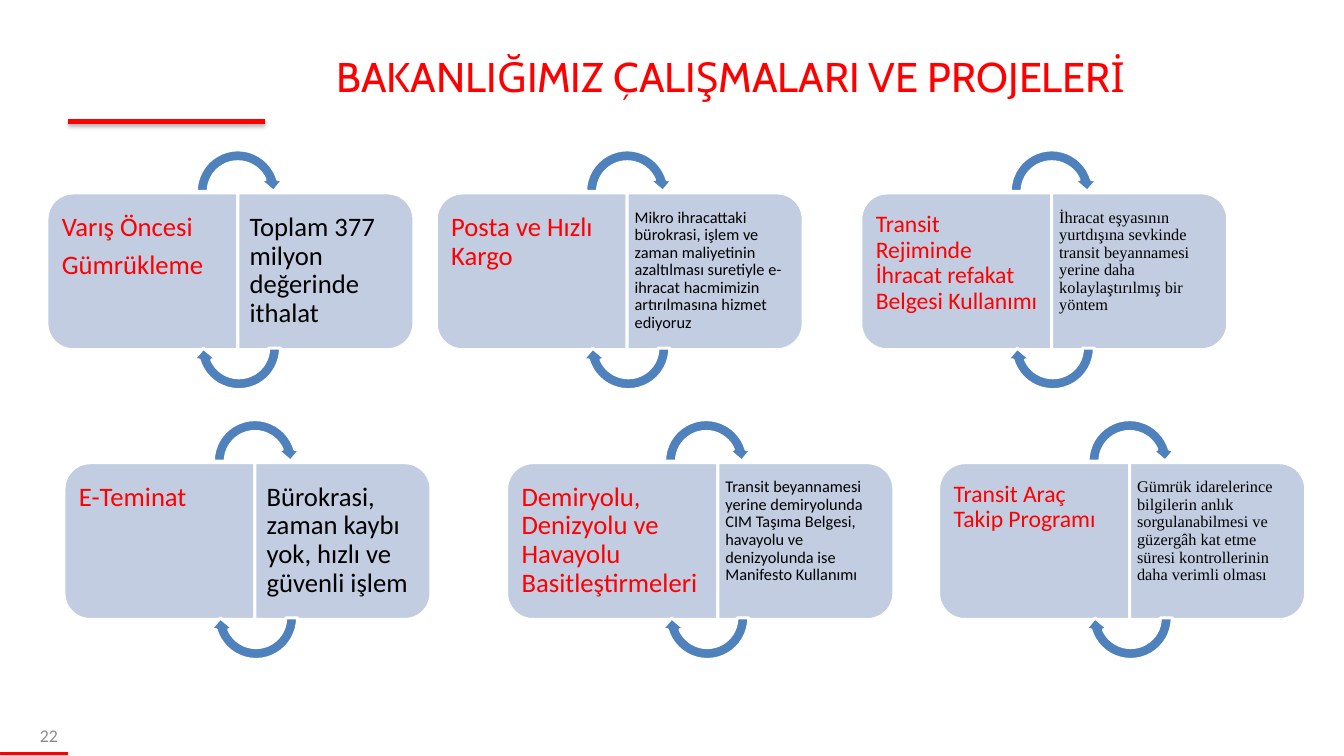
from dataclasses import dataclass

from lxml.etree import SubElement
from pptx import Presentation
from pptx.dml.color import RGBColor
from pptx.enum.shapes import MSO_CONNECTOR, MSO_SHAPE
from pptx.enum.text import MSO_ANCHOR, PP_ALIGN
from pptx.oxml.ns import qn
from pptx.shapes.autoshape import Shape
from pptx.slide import Slide
from pptx.util import Inches, Pt


@dataclass(frozen=True)
class TextStyle:
    size: int
    color: str
    font: str = "Calibri"
    insets: tuple[float, float, float, float] = (0.1, 0.05, 0.1, 0.05)
    align: PP_ALIGN = PP_ALIGN.LEFT
    anchor: MSO_ANCHOR = MSO_ANCHOR.TOP
    line_spacing: float = 0.9
    space_ratio: float = 0.35


@dataclass(frozen=True)
class Theme:
    accent: str = "FF0000"
    panel: str = "C2CDE1"
    arrow: str = "4F81BD"
    outline: str = "FFFFFF"
    outline_width: float = 2
    title: TextStyle = TextStyle(28, "FF0000", "Cabin", align=PP_ALIGN.CENTER,
                                 anchor=MSO_ANCHOR.MIDDLE, line_spacing=1, space_ratio=0)
    page_number: TextStyle = TextStyle(12, "8C8C8C", align=PP_ALIGN.RIGHT,
                                       anchor=MSO_ANCHOR.MIDDLE, line_spacing=1, space_ratio=0)
    topic: TextStyle = TextStyle(18, "FF0000", insets=(0.07, 0.12, 0.11, 0.12))
    small_topic: TextStyle = TextStyle(16, "FF0000", insets=(0.07, 0.11, 0.1, 0.11))
    result: TextStyle = TextStyle(18, "000000", insets=(0.11, 0.12, 0.07, 0.12))
    detail: TextStyle = TextStyle(11, "000000", insets=(0.07, 0.08, 0.05, 0.08))
    serif_detail: TextStyle = TextStyle(11, "000000", "Times New Roman",
                                        insets=(0.07, 0.08, 0.05, 0.08))


@dataclass(frozen=True)
class Project:
    left: float
    top: float
    topic: list[str]
    topic_style: TextStyle
    outcome: str
    outcome_style: TextStyle
    topic_width: float = 1.79
    arrow_shift: float = 0


@dataclass(frozen=True)
class Rule:
    left: float
    right: float
    y: float
    width: float
    shadow_alpha: int
    shadow_distance: float


THEME = Theme()
FIRST_ROW, SECOND_ROW = 1.81, 4.34
PANEL_HEIGHT = 1.47
OUTCOME_WIDTH = 1.65
TEXT_HEIGHT = 1.33
TEXT_MARGIN = 0.07
ARROW_SIZE = 0.89
ARROW_ADJUSTMENTS = (0.125, 11.423, 204.577, 108, 0.125)

RULES = [
    Rule(0.64, 2.48, 1.14, 3, 35, 1.8),
    Rule(0, 0.64, 7.07, 2, 38, 1.6),
]

PROJECTS = [
    Project(0.44, FIRST_ROW, ["Varış Öncesi", "Gümrükleme"], THEME.topic,
            "Toplam 377 milyon değerinde ithalat", THEME.result),
    Project(0.6, SECOND_ROW, ["E-Teminat"], THEME.topic,
            "Bürokrasi, zaman kaybı yok, hızlı ve güvenli işlem", THEME.result),
    Project(4.09, FIRST_ROW, ["Posta ve Hızlı Kargo"], THEME.topic,
            "Mikro ihracattaki bürokrasi, işlem ve zaman maliyetinin azaltılması suretiyle "
            "e-ihracat hacmimizin artırılmasına hizmet ediyoruz", THEME.detail),
    Project(4.75, SECOND_ROW, ["Demiryolu, Denizyolu ve Havayolu Basitleştirmeleri"], THEME.topic,
            "Transit beyannamesi yerine demiryolunda CIM Taşıma Belgesi, havayolu ve "
            "denizyolunda ise Manifesto Kullanımı", THEME.detail,
            topic_width=1.98, arrow_shift=-0.11),
    Project(8.07, FIRST_ROW, ["Transit Rejiminde İhracat refakat Belgesi Kullanımı"],
            THEME.small_topic,
            "İhracat eşyasının yurtdışına sevkinde transit beyannamesi yerine daha "
            "kolaylaştırılmış bir yöntem", THEME.serif_detail),
    Project(8.8, SECOND_ROW, ["Transit Araç Takip Programı"], THEME.small_topic,
            "Gümrük idarelerince bilgilerin anlık sorgulanabilmesi ve güzergâh kat etme "
            "süresi kontrollerinin daha verimli olması", THEME.serif_detail),
]


def add_text(slide: Slide, left: float, top: float, width: float, height: float,
             lines: list[str], style: TextStyle) -> None:
    frame = slide.shapes.add_textbox(
        Inches(left), Inches(top), Inches(width), Inches(height)).text_frame
    frame.word_wrap = True
    frame.vertical_anchor = style.anchor
    (frame.margin_left, frame.margin_top,
     frame.margin_right, frame.margin_bottom) = map(Inches, style.insets)
    frame.text = "\n".join(lines)
    for paragraph in frame.paragraphs:
        paragraph.alignment = style.align
        paragraph.line_spacing = style.line_spacing
        paragraph.space_after = Pt(style.space_ratio * style.size)
        paragraph.font.size = Pt(style.size)
        paragraph.font.name = style.font
        paragraph.font.color.rgb = RGBColor.from_string(style.color)


def paint(shape: Shape, fill: str) -> None:
    shape.shadow.inherit = False
    shape.fill.solid()
    shape.fill.fore_color.rgb = RGBColor.from_string(fill)
    shape.line.color.rgb = RGBColor.from_string(THEME.outline)
    shape.line.width = Pt(THEME.outline_width)


def add_panel(slide: Slide, left: float, top: float, width: float, rotation: int) -> None:
    offset = (width - PANEL_HEIGHT) / 2
    panel = slide.shapes.add_shape(
        MSO_SHAPE.ROUND_2_SAME_RECTANGLE, Inches(left + offset), Inches(top - offset),
        Inches(PANEL_HEIGHT), Inches(width))
    panel.rotation = rotation
    panel.adjustments[0] = 0.167
    panel.adjustments[1] = 0
    paint(panel, THEME.panel)


def add_arrow(slide: Slide, left: float, top: float, rotation: int) -> None:
    arrow = slide.shapes.add_shape(
        MSO_SHAPE.CIRCULAR_ARROW, Inches(left), Inches(top),
        Inches(ARROW_SIZE), Inches(ARROW_SIZE))
    arrow.rotation = rotation
    for index, value in enumerate(ARROW_ADJUSTMENTS):
        arrow.adjustments[index] = value
    paint(arrow, THEME.arrow)


def add_project(slide: Slide, project: Project) -> None:
    seam = project.left + project.topic_width
    text_top = project.top + TEXT_MARGIN
    add_panel(slide, project.left, project.top, project.topic_width, 270)
    add_text(slide, project.left + TEXT_MARGIN, text_top, project.topic_width - TEXT_MARGIN,
             TEXT_HEIGHT, project.topic, project.topic_style)
    add_panel(slide, seam, project.top, OUTCOME_WIDTH, 90)
    add_text(slide, seam, text_top, OUTCOME_WIDTH - TEXT_MARGIN,
             TEXT_HEIGHT, [project.outcome], project.outcome_style)
    arrow_left = seam - ARROW_SIZE / 2 + project.arrow_shift
    add_arrow(slide, arrow_left, project.top - 0.46, 0)
    add_arrow(slide, arrow_left + 0.01, project.top + 1.01, 180)


def add_rule(slide: Slide, rule: Rule) -> None:
    connector = slide.shapes.add_connector(
        MSO_CONNECTOR.STRAIGHT, Inches(rule.left), Inches(rule.y),
        Inches(rule.right), Inches(rule.y))
    connector.line.color.rgb = RGBColor.from_string(THEME.accent)
    connector.line.width = Pt(rule.width)
    effects = SubElement(connector._element.spPr, qn("a:effectLst"))
    shadow = SubElement(effects, qn("a:outerShdw"), blurRad=str(Pt(3.1)),
                        dist=str(Pt(rule.shadow_distance)), dir="5400000", rotWithShape="0")
    color = SubElement(shadow, qn("a:srgbClr"), val="000000")
    SubElement(color, qn("a:alpha"), val=str(rule.shadow_alpha * 1000))


def main() -> None:
    presentation = Presentation()
    presentation.slide_width = Inches(12.6)
    presentation.slide_height = Inches(7.09)
    slide = presentation.slides.add_slide(presentation.slide_layouts[6])
    for rule in RULES:
        add_rule(slide, rule)
    add_text(slide, 1.18, 0.12, 11.34, 1.18,
             ["BAKANLIĞIMIZ ÇALIŞMALARI VE PROJELERİ"], THEME.title)
    for project in PROJECTS:
        add_project(slide, project)
    add_text(slide, 0, 6.71, 0.64, 0.38, ["22"], THEME.page_number)
    presentation.save("out.pptx")


if __name__ == "__main__":
    main()
